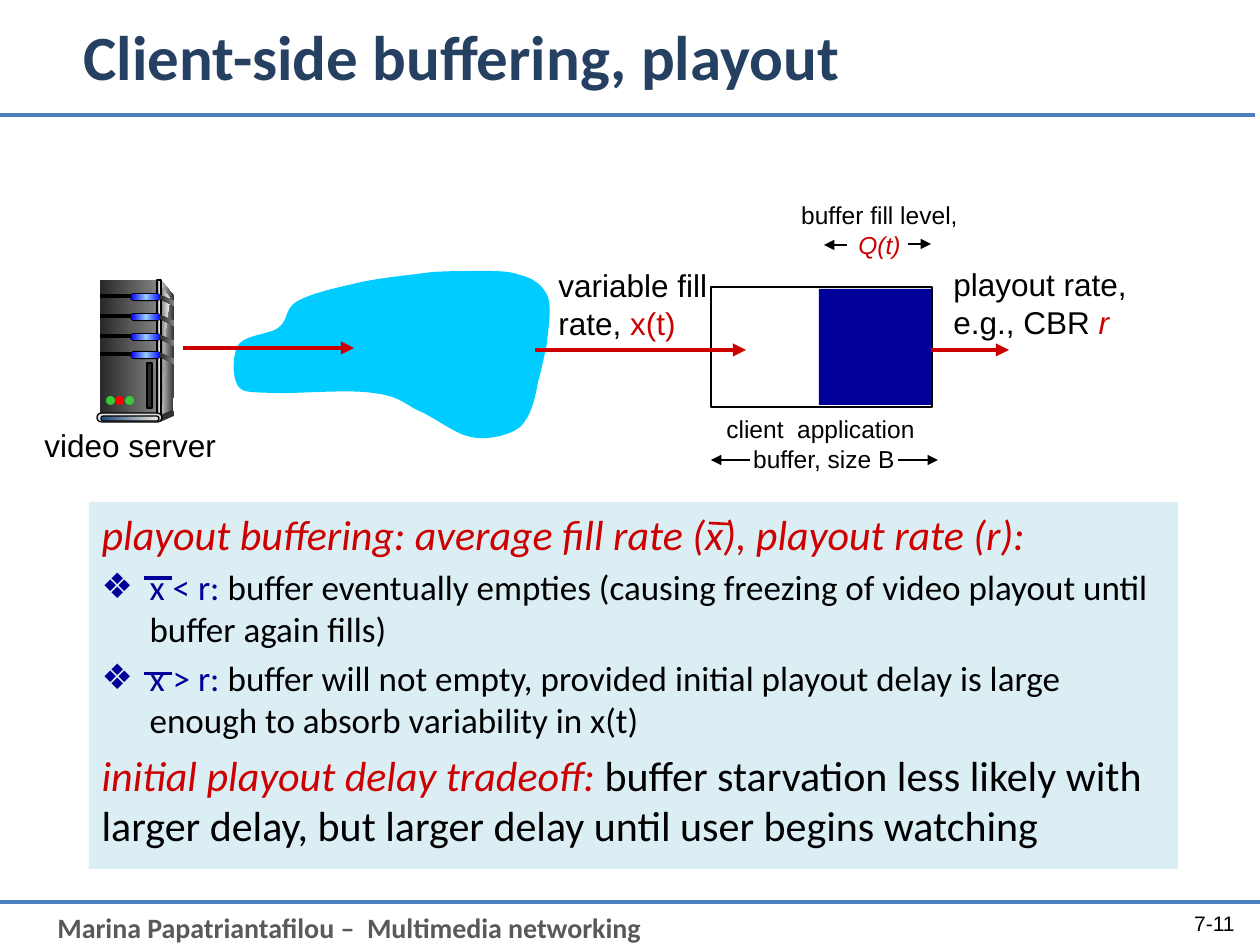
from copy import deepcopy
from dataclasses import dataclass

from lxml.etree import SubElement
from pptx import Presentation
from pptx.dml.color import RGBColor
from pptx.enum.shapes import MSO_CONNECTOR, MSO_SHAPE
from pptx.enum.text import MSO_ANCHOR, MSO_AUTO_SIZE, PP_ALIGN
from pptx.oxml.ns import qn
from pptx.util import Emu, Pt

EMU_PER_PX = 914400 / 126
BLACK = RGBColor(0x00, 0x00, 0x00)
RED = RGBColor(0xCC, 0x00, 0x00)
NAVY = RGBColor(0x00, 0x00, 0x99)
TITLE_BLUE = RGBColor(0x25, 0x40, 0x61)
RULE_BLUE = RGBColor(0x4B, 0x7E, 0xBC)
PANEL_BLUE = RGBColor(0xDB, 0xEE, 0xF4)
CLOUD_BLUE = RGBColor(0x00, 0xCC, 0xFF)
LAMP_BLUE = RGBColor(0x00, 0x00, 0xFF)
LAMP_LIGHT = RGBColor(0x99, 0xCC, 0xFF)
LAMP_GREEN = RGBColor(0x33, 0xCC, 0x33)
LAMP_RED = RGBColor(0xFF, 0x00, 0x00)
FOOTER_GRAY = RGBColor(0x59, 0x59, 0x59)
CHARCOAL = RGBColor(0x29, 0x29, 0x29)
DARK_GRAY = RGBColor(0x33, 0x33, 0x33)
MID_GRAY = RGBColor(0x80, 0x80, 0x80)
LIGHT_GRAY = RGBColor(0xDD, 0xDD, 0xDD)
PALE_GRAY = RGBColor(0xF8, 0xF8, 0xF8)
BASE_DARK = RGBColor(0x1F, 0x49, 0x7D)
BASE_LIGHT = RGBColor(0xEE, 0xEC, 0xE1)
METAL = (CHARCOAL, MID_GRAY)
LAMP = (LAMP_BLUE, LAMP_LIGHT, LAMP_BLUE)


@dataclass
class Run:
    text: str
    size: int
    color: RGBColor = BLACK
    italic: bool = False
    bold: bool = False
    font: str = "Arial"


@dataclass
class Label:
    box: tuple
    paragraphs: list
    align: PP_ALIGN = PP_ALIGN.LEFT
    wrap: bool = True
    anchor: MSO_ANCHOR = MSO_ANCHOR.TOP


@dataclass
class Block:
    box: tuple
    fill: tuple = ()
    outline: float = 0
    kind: MSO_SHAPE = MSO_SHAPE.RECTANGLE


@dataclass
class Line:
    start: tuple
    end: tuple
    color: RGBColor
    width: float
    arrow: bool = False


def px(value: int) -> Emu:
    """Turn pixels into EMU."""
    return Emu(round(value * EMU_PER_PX))


def place(shape, box: tuple) -> None:
    """Move and size a shape."""
    for name, value in zip(("left", "top", "width", "height"), box):
        setattr(shape, name, px(value))


def paint(shape, colors: tuple, outline: float = 0) -> None:
    """Give a shape no fill, one colour or an even horizontal gradient."""
    shape.shadow.inherit = False
    if not colors:
        shape.fill.background()
    elif len(colors) == 1:
        shape.fill.solid()
        shape.fill.fore_color.rgb = colors[0]
    else:
        shape.fill.gradient()
        shape.fill.gradient_angle = 0
        stop_list = next(shape._element.iter(qn("a:gsLst")))
        while len(stop_list) < len(colors):
            stop_list.append(deepcopy(stop_list[-1]))
        for index, (stop, color) in enumerate(zip(shape.fill.gradient_stops, colors)):
            stop.color.rgb = color
            stop.position = index / (len(colors) - 1)
    if outline:
        shape.line.color.rgb = BLACK
        shape.line.width = Pt(outline)
    else:
        shape.line.fill.background()


def draw_block(shapes, block: Block) -> None:
    """Draw a preset shape."""
    shape = shapes.add_shape(block.kind, *map(px, block.box))
    if block.kind == MSO_SHAPE.ROUNDED_RECTANGLE:
        shape.adjustments[0] = 0.5
    paint(shape, block.fill, block.outline)


def draw_outline(shapes, points: list, fill: tuple, curves: int = 0) -> None:
    """Draw a closed outline whose first segments are cubic curves."""
    corners = [(px(x), px(y)) for x, y in points]
    builder = shapes.build_freeform(*corners[0])
    builder.add_line_segments(corners[1:], close=True)
    shape = builder.convert_to_shape()
    segments = list(shape._element.iter(qn("a:lnTo")))
    for first in range(0, 3 * curves, 3):
        curve = SubElement(segments[first].getparent(), qn("a:cubicBezTo"))
        segments[first].addprevious(curve)
        for segment in segments[first:first + 3]:
            curve.append(segment[0])
            segment.getparent().remove(segment)
    paint(shape, fill)


def draw_line(shapes, line: Line) -> None:
    """Draw a straight line, with an arrowhead if asked."""
    connector = shapes.add_connector(MSO_CONNECTOR.STRAIGHT, *map(px, line.start + line.end))
    connector.line.color.rgb = line.color
    connector.line.width = Pt(line.width)
    if line.arrow:
        SubElement(connector.line._ln, qn("a:tailEnd"), type="triangle")
    SubElement(connector._element.spPr, qn("a:effectLst"))


def write_paragraphs(frame, paragraphs: list, align: PP_ALIGN = PP_ALIGN.LEFT) -> None:
    """Fill a text frame with aligned, formatted paragraphs."""
    for index, items in enumerate(paragraphs):
        paragraph = frame.add_paragraph() if index else frame.paragraphs[0]
        paragraph.alignment = align
        for item in items:
            run = paragraph.add_run()
            run.text = item.text
            values = {"name": item.font, "size": Pt(item.size), "bold": item.bold, "italic": item.italic}
            for name, value in values.items():
                setattr(run.font, name, value)
            run.font.color.rgb = item.color


def draw_label(shapes, label: Label) -> None:
    """Draw a text box."""
    frame = shapes.add_textbox(*map(px, label.box)).text_frame
    for name, value in {"word_wrap": label.wrap, "vertical_anchor": label.anchor}.items():
        setattr(frame, name, value)
    write_paragraphs(frame, label.paragraphs, label.align)


def set_bullet(paragraph, bullet: str) -> None:
    """Set a hanging bullet, or none for an empty string."""
    properties = paragraph._p.get_or_add_pPr()
    indent = px(48) if bullet else 0
    properties.set("marL", str(indent))
    properties.set("indent", str(-indent))
    if bullet:
        SubElement(properties, qn("a:buChar"), char=bullet)
    else:
        SubElement(properties, qn("a:buNone"))


def fill_placeholders(slide) -> None:
    """Write the title and the body panel."""
    title, body = slide.shapes.title, slide.placeholders[1]
    place(title, (71, -24, 1071, 158))
    place(body, (89, 502, 1089, 367))
    for shape, anchor in ((title, MSO_ANCHOR.MIDDLE), (body, MSO_ANCHOR.TOP)):
        shape.text_frame.auto_size = MSO_AUTO_SIZE.NONE
        shape.text_frame.vertical_anchor = anchor
    body.fill.solid()
    body.fill.fore_color.rgb = PANEL_BLUE
    write_paragraphs(title.text_frame, [[Run("Client-side buffering, playout", 36, TITLE_BLUE, bold=True, font="Calibri")]])
    items = [
        ("", 24, RED, "playout buffering: average fill rate (x), playout rate (r):", ""),
        ("❖", 20, NAVY, "x < r: ", "buffer eventually empties (causing freezing of video playout until buffer again fills)"),
        ("❖", 20, NAVY, "x > r: ", "buffer will not empty, provided initial playout delay is large enough to absorb variability in x(t)"),
        ("", 24, RED, "initial playout delay tradeoff: ", "buffer starvation less likely with larger delay, but larger delay until user begins watching"),
    ]
    paragraphs = [[Run(lead, size, color, not bullet, font="Calibri")] + ([Run(rest, size, font="Calibri")] if rest else [])
                  for bullet, size, color, lead, rest in items]
    write_paragraphs(body.text_frame, paragraphs)
    for paragraph, item in zip(body.text_frame.paragraphs, items):
        set_bullet(paragraph, item[0])


def draw_server(slide) -> None:
    """Draw the video server as one group."""
    shapes = slide.shapes.add_group_shape().shapes
    pill, oval = MSO_SHAPE.ROUNDED_RECTANGLE, MSO_SHAPE.OVAL
    draw_outline(shapes, [(161, 280), (174, 296), (173, 411), (159, 416)], (LIGHT_GRAY, DARK_GRAY))
    draw_block(shapes, Block((100, 280, 57, 136), METAL))
    draw_outline(shapes, [(161, 287), (161, 287), (164, 289), (170, 299), (161, 349), (163, 415), (161, 412)],
                 (MID_GRAY, PALE_GRAY), curves=2)
    draw_block(shapes, Block((157, 280, 4, 136), (DARK_GRAY, LIGHT_GRAY, DARK_GRAY), 0.75))
    for top in (295, 315, 335, 353):
        draw_block(shapes, Block((101, top, 33, 2), (BLACK,), 0.75))
        draw_block(shapes, Block((130, top - 2, 31, 8), (BLACK,), kind=pill))
        draw_block(shapes, Block((131, top - 1, 30, 6), LAMP, kind=pill))
        draw_outline(shapes, [(160, top), (174, top + 6), (174, top + 11), (160, top + 4)], METAL)
    draw_block(shapes, Block((171, 410, 3, 6), (DARK_GRAY,), kind=oval))
    draw_outline(shapes, [(160, 415), (160, 422), (174, 416), (173, 410)], (DARK_GRAY,))
    draw_block(shapes, Block((97, 413, 65, 9), (LIGHT_GRAY,), 0.75, pill))
    draw_block(shapes, Block((101, 416, 58, 5), (BASE_DARK, BASE_LIGHT), 0.75, pill))
    for left, color in zip((106, 115, 125), (LAMP_GREEN, LAMP_RED, LAMP_GREEN)):
        draw_block(shapes, Block((left, 396, 9, 9), (color,), kind=oval))
    draw_block(shapes, Block((147, 363, 5, 45), (CHARCOAL,), 0.75))


CLOUD = [
    (432, 272), (412, 275), (375, 278), (353, 284), (330, 289), (307, 295), (296, 302), (284, 310), (289, 320),
    (278, 328), (270, 334), (246, 335), (239, 344), (232, 354), (232, 377), (238, 386), (243, 393), (251, 392),
    (273, 393), (295, 394), (349, 389), (373, 393), (398, 396), (402, 402), (417, 410), (432, 416), (450, 430),
    (464, 435), (478, 440), (490, 438), (500, 436), (510, 433), (520, 430), (525, 421), (532, 412), (536, 394),
    (538, 382), (542, 368), (544, 357), (547, 343), (548, 329), (552, 309), (548, 297), (543, 285), (533, 278),
    (520, 275), (508, 270), (486, 271), (471, 271), (457, 271), (452, 271), (432, 272),
]
BUFFER = [Block((711, 287, 221, 120), outline=1.25), Block((819, 289, 112, 116), (NAVY,))]
LINES = [
    Line((0, 902), (1260, 902), RULE_BLUE, 2.25),
    Line((-5, 115), (1255, 115), RULE_BLUE, 2.25),
    Line((183, 348), (354, 348), RED, 2.5, True),
    Line((535, 350), (746, 350), RED, 2.5, True),
    Line((931, 350), (1009, 350), RED, 2.5, True),
    Line((898, 460), (938, 460), BLACK, 1.25, True),
    Line((750, 460), (711, 460), BLACK, 1.25, True),
    Line((847, 245), (824, 245), BLACK, 1.25, True),
    Line((908, 244), (931, 244), BLACK, 1.25, True),
    Line((144, 578), (172, 578), NAVY, 1.75),
    Line((144, 674), (172, 674), NAVY, 1.75),
    Line((709, 523), (729, 524), RED, 1.5),
]
LABELS = [
    Label((45, 904, 1166, 47), [[Run("Marina Papatriantafilou –  Multimedia networking", 16, FOOTER_GRAY, bold=True, font="Calibri")]]),
    Label((1146, 898, 101, 50), [[Run("7-11", 12)]], PP_ALIGN.RIGHT, anchor=MSO_ANCHOR.MIDDLE),
    Label((546, 260, 183, 89), [[Run("variable fill", 18)], [Run("rate, ", 18), Run("x(t)", 18, RED)]], wrap=False),
    Label((710, 408, 228, 72), [[Run("client  application ", 14)], [Run("buffer, size B", 14)]], PP_ALIGN.CENTER),
    Label((941, 259, 200, 89), [[Run("playout rate,", 18)], [Run("e.g., CBR ", 18), Run("r", 18, RED, True)]], wrap=False),
    Label((781, 194, 197, 72), [[Run("buffer fill level, ", 14), Run("Q(t)", 14, RED, True)]], PP_ALIGN.CENTER),
    Label((32, 420, 207, 50), [[Run("video server", 18)]], wrap=False),
]


def main() -> None:
    """Build and save the slide."""
    presentation = Presentation()
    presentation.slide_width, presentation.slide_height = px(1260), px(945)
    slide = presentation.slides.add_slide(presentation.slide_layouts[1])
    fill_placeholders(slide)
    draw_server(slide)
    draw_outline(slide.shapes, CLOUD, (CLOUD_BLUE,), curves=len(CLOUD) // 3)
    for items, draw in ((BUFFER, draw_block), (LINES, draw_line), (LABELS, draw_label)):
        for item in items:
            draw(slide.shapes, item)
    presentation.save("out.pptx")


if __name__ == "__main__":
    main()
